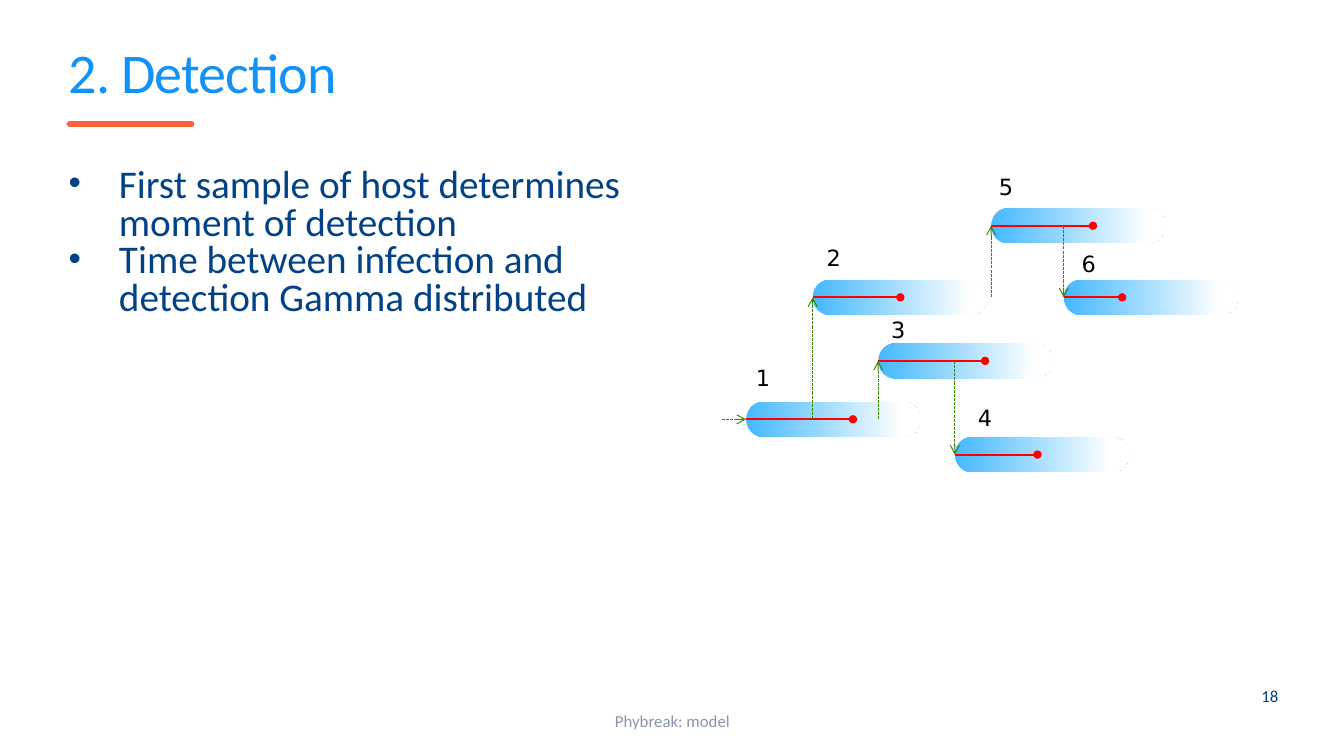
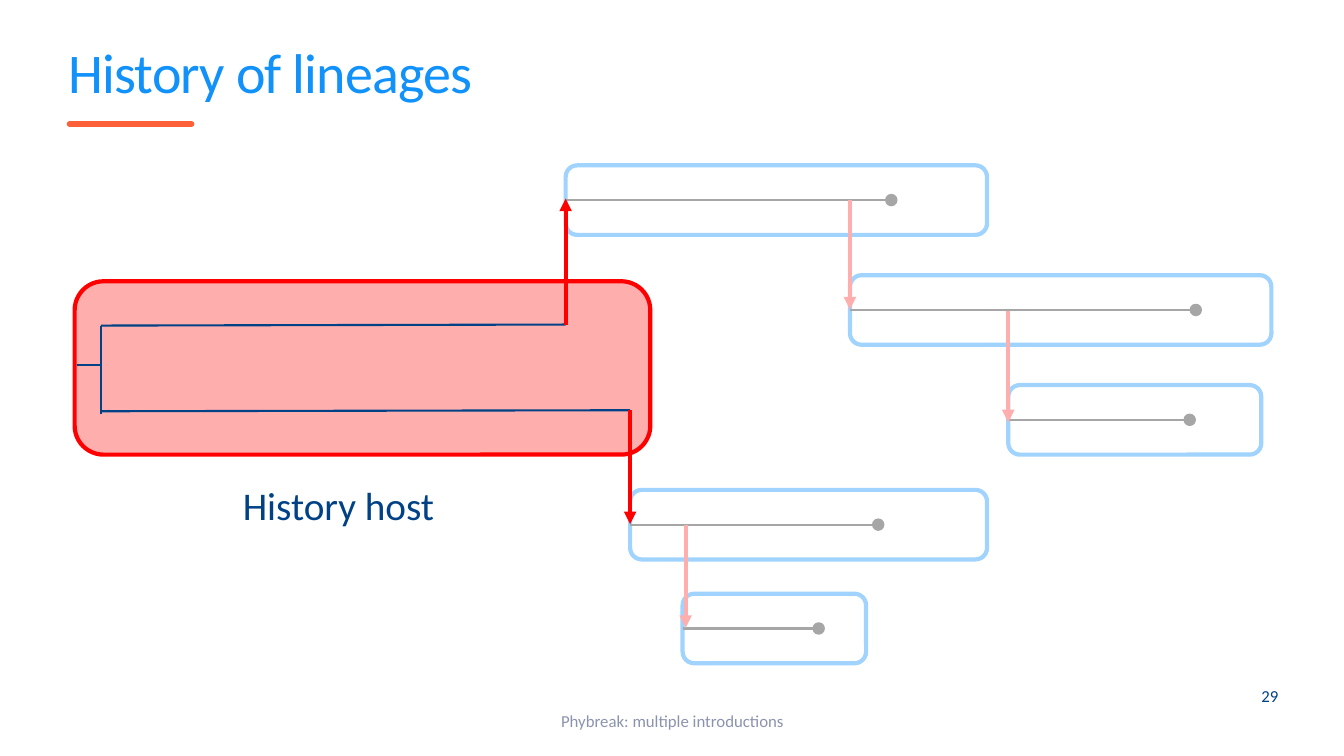
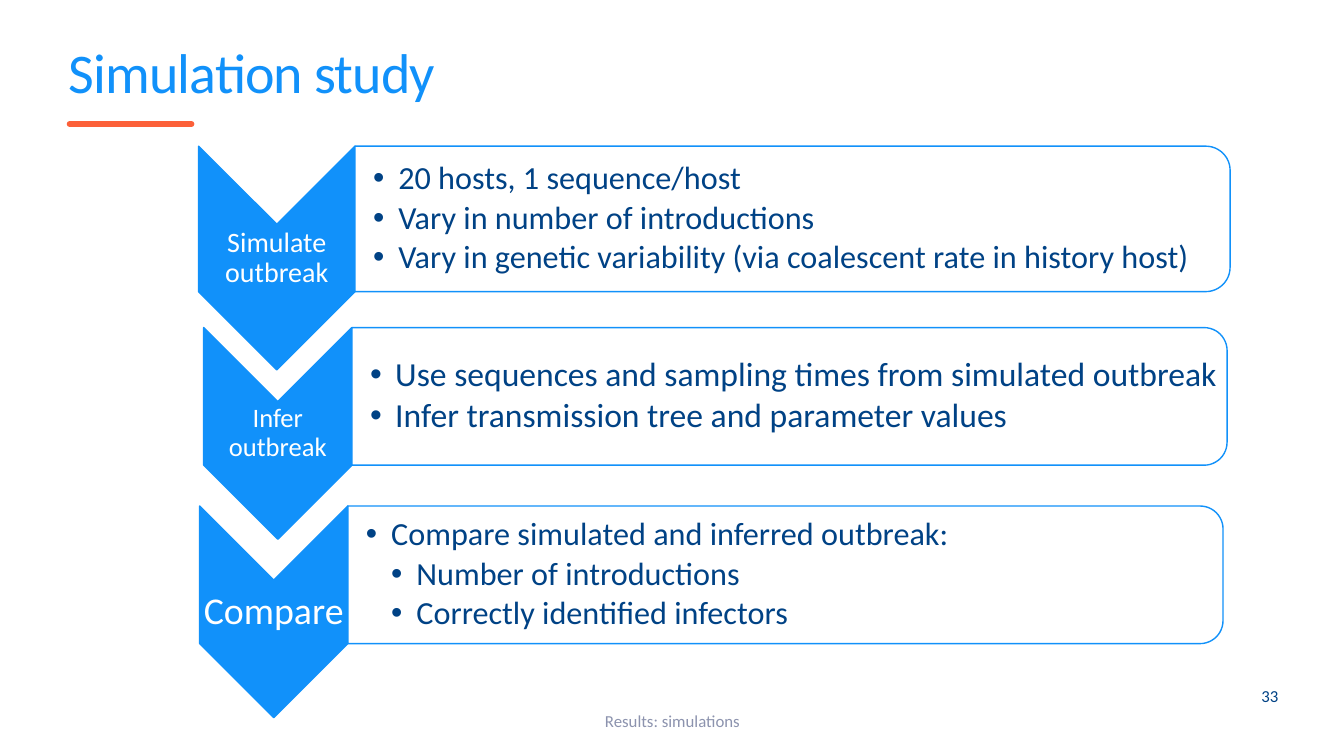
from lxml.etree import SubElement
from pptx import Presentation
from pptx.dml.color import RGBColor
from pptx.enum.dml import MSO_LINE
from pptx.enum.shapes import MSO_CONNECTOR, MSO_SHAPE
from pptx.enum.text import MSO_ANCHOR, PP_ALIGN
from pptx.oxml.ns import qn
from pptx.util import Inches, Pt

COLORS = {
    "title": "1191FA", "text": "004285", "footer": "8C93AE", "accent": "FC6039",
    "white": "FFFFFF", "black": "000000", "host": "44B8FF", "infection": "378709",
    "red": "FF0000", "pale red": "FFAEAE", "pale blue": "A0D3FD", "gray": "A6A6A6",
}


def rgb(name):
    return RGBColor.from_string(COLORS[name])


def add_text(slide, area, lines, size, color, font="Calibri", align=PP_ALIGN.LEFT,
             anchor=MSO_ANCHOR.TOP, insets=(0, 0, 0, 0), spacing=1.0, wrap=True):
    """Add a text box with one paragraph per line; insets are left, top, right, bottom."""
    box = slide.shapes.add_textbox(*map(Inches, area))
    frame = box.text_frame
    frame.text = "\n".join(lines)
    frame.word_wrap = wrap
    frame.vertical_anchor = anchor
    frame.margin_left, frame.margin_top, frame.margin_right, frame.margin_bottom = map(Inches, insets)
    for para in frame.paragraphs:
        para.alignment = align
        para.line_spacing = spacing
        for span in para.runs:
            span.font.name = font
            span.font.size = Pt(size)
            span.font.color.rgb = rgb(color)
    return frame


def add_bullet(para, margin, hang, scale=100):
    properties = para._p.get_or_add_pPr()
    properties.set("marL", str(Inches(margin)))
    properties.set("indent", str(-Inches(hang)))
    SubElement(SubElement(properties, qn("a:buClr")), qn("a:srgbClr"), val=COLORS["text"])
    SubElement(properties, qn("a:buSzPct"), val=str(scale * 1000))
    SubElement(properties, qn("a:buFont"), typeface="Arial")
    SubElement(properties, qn("a:buChar"), char="•")


def add_line(slide, start, end, color, width, tip=None, dash=None, cap=None):
    """Draw a straight line; tip is the arrowhead type at its end."""
    connector = slide.shapes.add_connector(MSO_CONNECTOR.STRAIGHT, *map(Inches, (*start, *end)))
    connector.line.color.rgb = rgb(color)
    connector.line.width = Pt(width)
    if dash:
        connector.line.dash_style = dash
    outline = connector.line._get_or_add_ln()
    if cap:
        outline.set("cap", cap)
    if tip:
        SubElement(outline, qn("a:tailEnd"), type=tip)
    SubElement(connector._element.spPr, qn("a:effectLst"))


def add_shape(slide, kind, area, fill, line=None, width=1, rotation=0):
    shape = slide.shapes.add_shape(kind, *map(Inches, area))
    shape.shadow.inherit = False
    shape.rotation = rotation
    shape.fill.solid()
    shape.fill.fore_color.rgb = rgb(fill)
    if line:
        shape.line.color.rgb = rgb(line)
        shape.line.width = Pt(width)
    else:
        shape.line.fill.background()
    return shape


def add_turned_shape(slide, kind, area, fill, line):
    """Add a shape turned by 90 degrees that covers the area after turning."""
    left, top, width, height = area
    shift = (width - height) / 2
    return add_shape(slide, kind, (left + shift, top - shift, height, width), fill, line, rotation=90)


def add_slide(deck, title, footer, number):
    slide = deck.slides.add_slide(deck.slide_layouts[6])
    add_line(slide, (0.69, 1.23), (1.9, 1.23), "accent", 4, cap="rnd")
    heading = add_text(slide, (0.68, 0.5, 12, 0.72), [title], 40, "title", spacing=0.8)
    heading.paragraphs[0].runs[0].font._element.set("spc", "-60")
    add_text(slide, (4.42, 6.95, 4.5, 0.4), [footer], 12, "footer",
             align=PP_ALIGN.CENTER, anchor=MSO_ANCHOR.MIDDLE)
    add_text(slide, (12.28, 6.77, 0.4, 0.27), [str(number)], 12, "text",
             align=PP_ALIGN.RIGHT, anchor=MSO_ANCHOR.MIDDLE)
    return slide


def add_infected_host(slide, left, middle):
    height = 0.35
    host = add_shape(slide, MSO_SHAPE.ROUNDED_RECTANGLE, (left, middle - height / 2, 1.73, height), "host")
    host.adjustments[0] = 0.5
    host.fill.gradient()
    host.fill.gradient_angle = 0
    for stop, position, color in zip(host.fill.gradient_stops, (0, 0.9), ("host", "white")):
        stop.position = position
        stop.color.rgb = rgb(color)


def add_detection_slide(deck):
    slide = add_slide(deck, "2. Detection", "Phybreak: model", 18)
    body = add_text(slide, (0.68, 1.67, 6.49, 4.72),
                    ["First sample of host determines moment of detection",
                     "Time between infection and detection Gamma distributed"],
                    28, "text", spacing=0.8)
    for para in body.paragraphs:
        add_bullet(para, 0.5, 0.5, 90)

    # host: infector, infection time, height of its row, detection time, label position
    hosts = {
        1: (None, 7.4, 4.16, 8.46, (7.4, 3.56)),
        2: (1, 8.06, 2.95, 8.93, (8.1, 2.37)),
        3: (1, 8.71, 3.58, 9.77, (8.74, 3.09)),
        4: (3, 9.47, 4.51, 10.29, (9.6, 3.96)),
        5: (2, 9.83, 2.24, 10.84, (9.81, 1.67)),
        6: (5, 10.55, 2.95, 11.13, (10.63, 2.43)),
    }
    for _, infected, middle, _, _ in hosts.values():
        add_infected_host(slide, infected, middle)
    for number, (infector, infected, middle, detected, label) in hosts.items():
        source = (infected, hosts[infector][2]) if infector else (infected - 0.24, middle)
        add_line(slide, source, (infected, middle), "infection", 0.75, "arrow", MSO_LINE.SQUARE_DOT)
        add_line(slide, (infected, middle), (detected, middle), "red", 1.5, "oval")
        add_text(slide, (*label, 0.34, 0.37), [str(number)], 16, "black", font="DejaVu Sans",
                 insets=(0.1, 0.05, 0.1, 0.05), wrap=False)


def add_lineages_slide(deck):
    slide = add_slide(deck, "History of lineages", "Phybreak: multiple introductions", 29)
    add_shape(slide, MSO_SHAPE.ROUNDED_RECTANGLE, (0.74, 2.79, 5.71, 1.72), "pale red", "red", 3)

    # left, top, width, sampling time
    hosts = [
        (5.61, 1.64, 4.18, 8.84),
        (8.43, 2.73, 4.18, 11.86),
        (10, 3.82, 2.51, 11.8),
        (6.25, 4.86, 3.54, 8.71),
        (6.77, 5.89, 1.82, 8.12),
    ]
    height, dot = 0.69, 0.11
    for left, top, width, sampled in hosts:
        middle = top + height / 2
        add_shape(slide, MSO_SHAPE.ROUNDED_RECTANGLE, (left, top, width, height), "white", "pale blue", 3)
        add_line(slide, (left, middle), (sampled, middle), "gray", 1.5)
        add_shape(slide, MSO_SHAPE.OVAL, (sampled - dot / 2, middle - dot / 2, dot, dot), "gray", "gray")

    for start, end in [((0.76, 3.62), (1, 3.62)), ((1, 4.11), (1, 3.23)),
                       ((1, 3.23), (5.61, 3.22)), ((1, 4.08), (6.25, 4.07))]:
        add_line(slide, start, end, "text", 1.5)
    for left, start, end, color in [(8.43, 1.98, 3.07, "pale red"), (10, 3.09, 4.19, "pale red"),
                                    (6.8, 5.21, 6.23, "pale red"), (5.61, 3.22, 1.97, "red"),
                                    (6.25, 4.07, 5.2, "red")]:
        add_line(slide, (left, start), (left, end), color, 3, "triangle")
    add_text(slide, (2.31, 4.73, 2.11, 0.57), ["History host"], 28, "text", insets=(0.1, 0.05, 0.1, 0.05))


def add_step(slide, area, label, label_size, points, point_size):
    """Add a downward chevron with its panel; points are (level, text) pairs."""
    left, top, width, height = area
    add_turned_shape(slide, MSO_SHAPE.CHEVRON, area, "title", "title")
    add_text(slide, (left, top + width / 2, width, height - width), [label], label_size, "white",
             align=PP_ALIGN.CENTER, anchor=MSO_ANCHOR.MIDDLE, insets=(0.01,) * 4, spacing=0.9)

    panel_left, panel_height = left + width, height * 0.65
    add_turned_shape(slide, MSO_SHAPE.ROUND_2_SAME_RECTANGLE,
                     (panel_left, top, 8.68, panel_height), "white", "title")
    body = add_text(slide, (panel_left, top, 8.62, panel_height), [text for _, text in points],
                    point_size, "text", anchor=MSO_ANCHOR.MIDDLE,
                    insets=(0.18, 0.02, 0.02, 0.02), spacing=0.9)
    for para, (level, _) in zip(body.paragraphs, points):
        add_bullet(para, 0.25 * level, 0.25)
        para.space_after = Pt(round(point_size * 0.15, 1))


def add_simulation_slide(deck):
    slide = add_slide(deck, "Simulation study", "Results: simulations", 33)
    add_step(slide, (1.97, 1.45, 1.55, 2.22), "Simulate outbreak", 20,
             [(1, "20 hosts, 1 sequence/host"),
              (1, "Vary in number of introductions"),
              (1, "Vary in genetic variability (via coalescent rate in history host)")], 23)
    add_step(slide, (2.02, 3.25, 1.47, 2.1), "Infer outbreak", 19,
             [(1, "Use sequences and sampling times from simulated outbreak"),
              (1, "Infer transmission tree and parameter values")], 24)
    add_step(slide, (1.98, 5.02, 1.47, 2.1), "Compare", 27,
             [(1, "Compare simulated and inferred outbreak:"),
              (2, "Number of introductions"),
              (2, "Correctly identified infectors")], 23)


def main():
    deck = Presentation()
    deck.slide_width, deck.slide_height = Inches(13.33), Inches(7.5)
    add_detection_slide(deck)
    add_lineages_slide(deck)
    add_simulation_slide(deck)
    deck.save("out.pptx")


if __name__ == "__main__":
    main()
